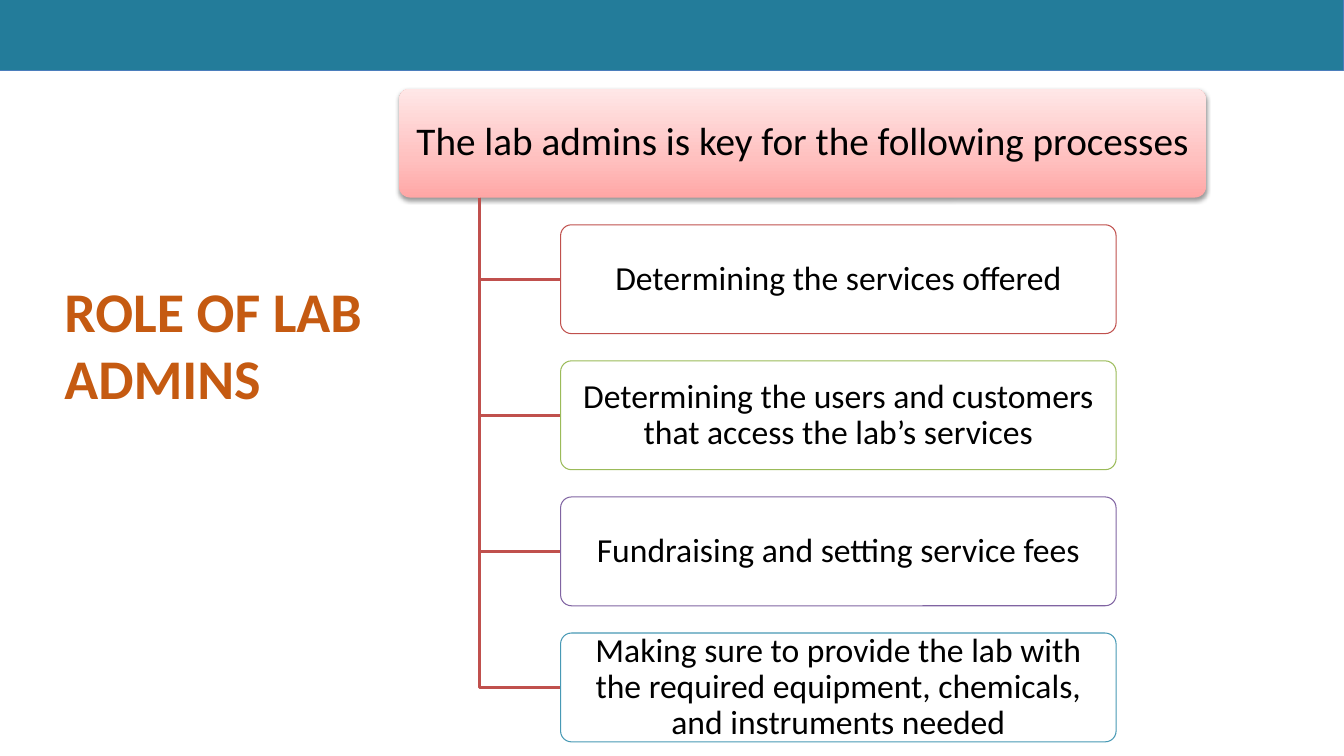
import copy

import lxml.etree
import pptx
import pptx.dml.color
import pptx.enum.shapes
import pptx.enum.text
import pptx.oxml.ns
import pptx.util

COLORS = {
    "banner": "237C9A", "banner_line": "4B7EBC", "title": "C55A11",
    "text": "000000", "white": "FFFFFF", "branch": "C0504D",
}
HEADER_STOPS = [(0, "FFA6A5"), (0.35, "FFC0BF"), (1, "FFE7E7")]
PROCESSES = [
    ("Determining the services offered", "C0504D"),
    ("Determining the users and customers that access the lab’s services", "9BBB59"),
    ("Fundraising and setting service fees", "8064A2"),
    ("Making sure to provide the lab with the required equipment, "
     "chemicals, and instruments needed", "4799B5"),
]
inches = pptx.util.Inches
rgb = pptx.dml.color.RGBColor.from_string
qn = pptx.oxml.ns.qn
shape_type = pptx.enum.shapes.MSO_SHAPE

# Tree grid, in inches
TREE_LEFT, TREE_TOP = 3.96, 0.88
HEADER_WIDTH, PROCESS_WIDTH = 8, 5.51
BOX_HEIGHT, ROW_STEP, INDENT = 1.08, 1.35, 0.8


def add_box(left, top, width, text, size):
    """Add a rounded box with centred text."""
    box = page.shapes.add_shape(
        shape_type.ROUNDED_RECTANGLE,
        inches(left), inches(top), inches(width), inches(BOX_HEIGHT))
    box.adjustments[0] = 0.1
    box.shadow.inherit = False
    frame = box.text_frame
    frame.word_wrap = True
    frame.vertical_anchor = pptx.enum.text.MSO_ANCHOR.MIDDLE
    frame.margin_left = frame.margin_right = inches(0.09)
    frame.margin_top = frame.margin_bottom = inches(0.07)
    para = frame.paragraphs[0]
    para.text = text
    para.alignment = pptx.enum.text.PP_ALIGN.CENTER
    para.line_spacing = 0.9
    style_font(para, size, COLORS["text"])
    return box


def style_font(para, size, color):
    """Set the font of a whole paragraph."""
    para.font.name = "Calibri"
    para.font.size = pptx.util.Pt(size)
    para.font.color.rgb = rgb(color)


deck = pptx.Presentation()
deck.slide_width, deck.slide_height = inches(13.33), inches(7.5)
page = deck.slides.add_slide(deck.slide_layouts[6])

# Banner
banner = page.shapes.add_shape(
    shape_type.RECTANGLE, 0, 0, deck.slide_width, inches(0.7))
banner.shadow.inherit = False
banner.fill.solid()
banner.fill.fore_color.rgb = rgb(COLORS["banner"])
banner.line.color.rgb = rgb(COLORS["banner_line"])
banner.line.width = pptx.util.Pt(0.75)

# Title
title = page.shapes.add_textbox(
    inches(0.54), inches(2.69), inches(3.39), inches(2.12))
title.text_frame.word_wrap = True
title_para = title.text_frame.paragraphs[0]
title_para.text = "ROLE OF LAB ADMINS"
style_font(title_para, 40, COLORS["title"])
title_para.font.bold = True

# Header box with a three-stop gradient
header = add_box(TREE_LEFT, TREE_TOP, HEADER_WIDTH,
                 "The lab admins is key for the following processes", 28)
header.line.fill.background()
header.fill.gradient()
header.fill.gradient_angle = 90
stop_list = header._element.spPr.find(".//" + qn("a:gsLst"))
stop_list.append(copy.deepcopy(stop_list[-1]))
for stop, (position, color) in zip(header.fill.gradient_stops, HEADER_STOPS):
    stop.position = position
    stop.color.rgb = rgb(color)

# Header shadow
effects = header._element.spPr.find(qn("a:effectLst"))
shadow = lxml.etree.SubElement(
    effects, qn("a:outerShdw"), blurRad=str(pptx.util.Pt(3.1)),
    dist=str(pptx.util.Pt(1.6)), dir="5400000", rotWithShape="0")
shadow_color = lxml.etree.SubElement(shadow, qn("a:srgbClr"), val=COLORS["text"])
lxml.etree.SubElement(shadow_color, qn("a:alpha"), val="38000")

# Process boxes, each with its elbow branch
trunk_x = TREE_LEFT + INDENT
trunk_top = TREE_TOP + BOX_HEIGHT
process_left = trunk_x + INDENT
for row, (text, outline) in enumerate(PROCESSES, start=1):
    top = TREE_TOP + row * ROW_STEP
    middle = top + BOX_HEIGHT / 2

    builder = page.shapes.build_freeform(inches(trunk_x), inches(trunk_top))
    builder.add_line_segments(
        [(inches(trunk_x), inches(middle)), (inches(process_left), inches(middle))],
        close=False)
    branch = builder.convert_to_shape()
    branch.shadow.inherit = False
    branch.fill.background()
    branch.line.color.rgb = rgb(COLORS["branch"])
    branch.line.width = pptx.util.Pt(2)

    process = add_box(process_left, top, PROCESS_WIDTH, text, 24)
    process.fill.solid()
    process.fill.fore_color.rgb = rgb(COLORS["white"])
    fill_color = process._element.spPr.find(qn("a:solidFill"))[0]
    lxml.etree.SubElement(fill_color, qn("a:alpha"), val="90000")
    process.line.color.rgb = rgb(outline)
    process.line.width = pptx.util.Pt(0.75)

deck.save("out.pptx")
